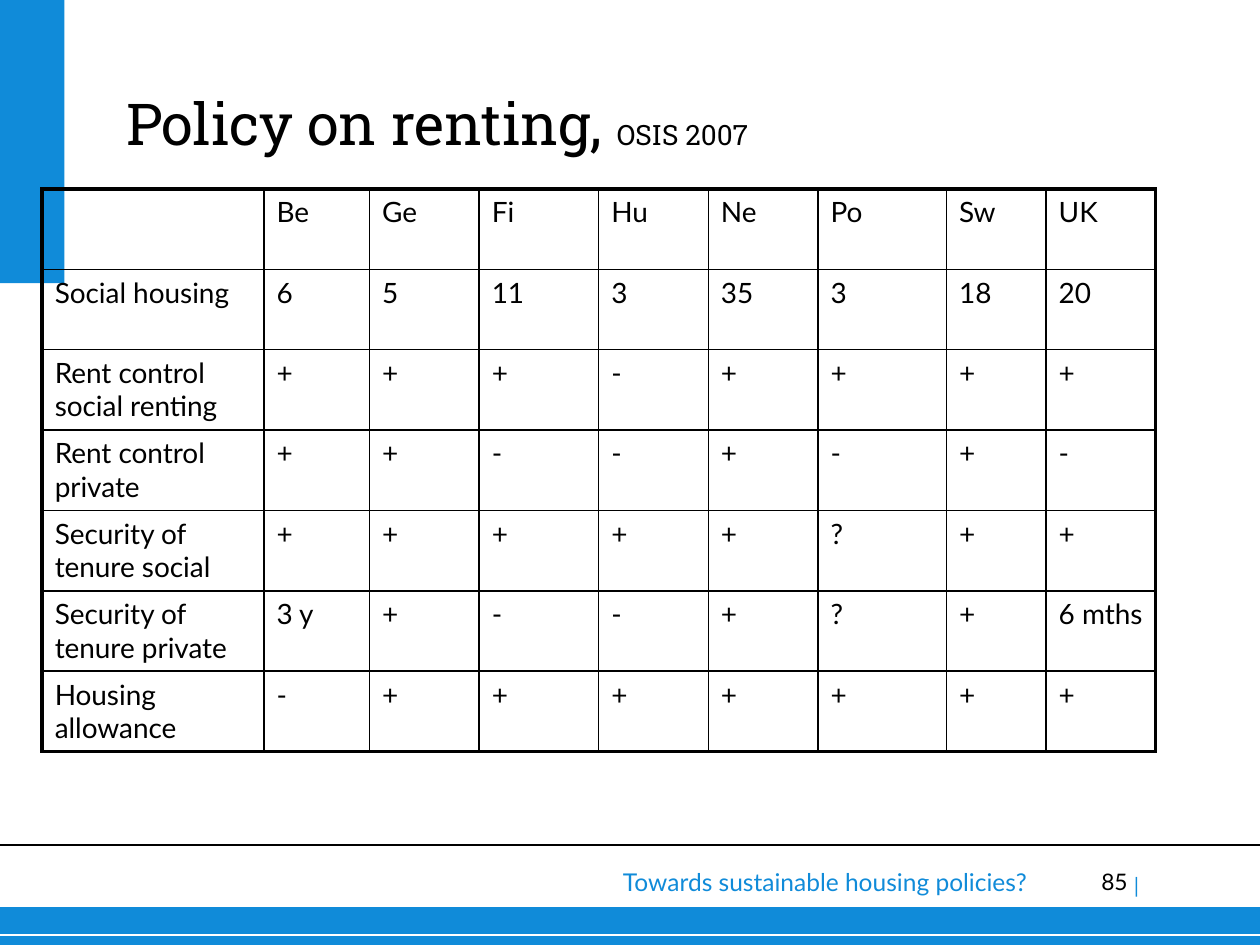
import pptx
import pptx.dml.color
import pptx.enum.shapes
import pptx.enum.text
import pptx.oxml.ns
import pptx.util
from dataclasses import dataclass
from lxml import etree

Cm = pptx.util.Cm
Pt = pptx.util.Pt
Align = pptx.enum.text.PP_ALIGN

BLUE, BLACK, WHITE = "108BD9", "000000", "FFFFFF"
BODY_FONT, TITLE_FONT = "Lato", "Roboto Slab"
SLIDE_WIDTH, SLIDE_HEIGHT = 25.4, 19.05
THIN, THICK = 1, 2.25

COLUMN_WIDTHS = [4.47, 2.13, 2.21, 2.41, 2.21, 2.21, 2.59, 2.01, 2.21]
ROW_HEIGHT = 1.62
POLICY_ROWS = [
    ["", "Be", "Ge", "Fi", "Hu", "Ne", "Po", "Sw", "UK"],
    ["Social housing", "6", "5", "11", "3", "35", "3", "18", "20"],
    ["Rent control social renting", "+", "+", "+", "-", "+", "+", "+", "+"],
    ["Rent control private", "+", "+", "-", "-", "+", "-", "+", "-"],
    ["Security of tenure social", "+", "+", "+", "+", "+", "?", "+", "+"],
    ["Security of tenure private", "3 y", "+", "-", "-", "+", "?", "+", "6 mths"],
    ["Housing allowance", "-", "+", "+", "+", "+", "+", "+", "+"],
]


@dataclass
class Band:
    left: float
    top: float
    width: float
    height: float


@dataclass
class Rule:
    top: float
    color: str
    weight: float


@dataclass
class FooterText:
    text: str
    left: float
    top: float
    width: float
    height: float
    size: float
    color: str
    align: Align
    inset_x: float = 0
    inset_y: float = 0


BANDS = [Band(0, 18.29, SLIDE_WIDTH, 0.76), Band(0, 0, 1.3, 5.71)]
RULES = [Rule(18.85, WHITE, 0.75), Rule(17.04, BLACK, 1)]
FOOTER_TEXTS = [
    FooterText("85", 21.23, 17.5, 1.5, 0.71, 13, BLACK, Align.RIGHT),
    FooterText("Towards sustainable housing policies?", 8.69, 17.35, 12.27, 0.86,
               14, BLUE, Align.RIGHT, 0.25, 0.13),
    FooterText("|", 22.86, 17.58, 2.54, 0.51, 12, BLUE, Align.LEFT),
]


def rgb(color: str) -> pptx.dml.color.RGBColor:
    return pptx.dml.color.RGBColor.from_string(color)


def apply_format(target, values: dict) -> None:
    for name, value in values.items():
        setattr(target, name, value)


def add_run(paragraph, text: str, size: float, color: str = BLACK, font: str = BODY_FONT) -> None:
    run = paragraph.add_run()
    run.text = text
    apply_format(run.font, {"name": font, "size": Pt(size), "bold": False})
    run.font.color.rgb = rgb(color)


def draw_band(slide, band: Band) -> None:
    bar = slide.shapes.add_shape(
        pptx.enum.shapes.MSO_SHAPE.RECTANGLE,
        Cm(band.left), Cm(band.top), Cm(band.width), Cm(band.height))
    bar.shadow.inherit = False
    bar.fill.solid()
    bar.fill.fore_color.rgb = rgb(BLUE)
    bar.line.fill.background()


def draw_rule(slide, rule: Rule) -> None:
    line = slide.shapes.add_connector(
        pptx.enum.shapes.MSO_CONNECTOR.STRAIGHT,
        0, Cm(rule.top), Cm(SLIDE_WIDTH), Cm(rule.top))
    line.line.color.rgb = rgb(rule.color)
    line.line.width = Pt(rule.weight)
    properties = line._element.spPr
    etree.SubElement(properties, pptx.oxml.ns.qn("a:effectLst"))


def draw_footer_text(slide, item: FooterText) -> None:
    box = slide.shapes.add_textbox(Cm(item.left), Cm(item.top), Cm(item.width), Cm(item.height))
    apply_format(box.text_frame, {
        "word_wrap": True,
        "margin_left": Cm(item.inset_x), "margin_right": Cm(item.inset_x),
        "margin_top": Cm(item.inset_y), "margin_bottom": Cm(item.inset_y),
    })
    paragraph = box.text_frame.paragraphs[0]
    paragraph.alignment = item.align
    add_run(paragraph, item.text, item.size, item.color)


def draw_title(slide) -> None:
    title = slide.shapes.title
    apply_format(title, {"left": Cm(2.54), "top": Cm(0.2), "width": Cm(21.29), "height": Cm(2.97)})
    apply_format(title.text_frame, {
        "word_wrap": True,
        "auto_size": pptx.enum.text.MSO_AUTO_SIZE.NONE,
        "vertical_anchor": pptx.enum.text.MSO_ANCHOR.BOTTOM,
        "margin_left": 0, "margin_right": 0, "margin_top": 0, "margin_bottom": 0,
    })
    heading = title.text_frame.paragraphs[0]
    heading.alignment = Align.LEFT
    add_run(heading, "Policy on renting, ", 33, font=TITLE_FONT)
    add_run(heading, "OSIS 2007", 16, font=TITLE_FONT)


def set_borders(cell, weights: dict[str, float]) -> None:
    properties = cell._tc.get_or_add_tcPr()
    for side, weight in weights.items():
        border = etree.SubElement(properties, pptx.oxml.ns.qn(f"a:ln{side}"), w=str(int(Pt(weight))))
        fill = etree.SubElement(border, pptx.oxml.ns.qn("a:solidFill"))
        etree.SubElement(fill, pptx.oxml.ns.qn("a:srgbClr"), val=BLACK)


def draw_policy_table(slide) -> None:
    row_count, column_count = len(POLICY_ROWS), len(COLUMN_WIDTHS)
    table = slide.shapes.add_table(
        row_count, column_count, Cm(0.85), Cm(3.81),
        Cm(sum(COLUMN_WIDTHS)), Cm(ROW_HEIGHT * row_count)).table
    apply_format(table, {"first_row": False, "horz_banding": False})
    for column, width in zip(table.columns, COLUMN_WIDTHS):
        column.width = Cm(width)
    for r, entries in enumerate(POLICY_ROWS):
        table.rows[r].height = Cm(ROW_HEIGHT)
        for c, entry in enumerate(entries):
            cell = table.cell(r, c)
            # Outer edges are thick, inner ones thin
            set_borders(cell, {
                "L": THICK if c == 0 else THIN,
                "R": THICK if c == column_count - 1 else THIN,
                "T": THICK if r == 0 else THIN,
                "B": THICK if r == row_count - 1 else THIN,
            })
            cell.fill.background()
            if entry:
                add_run(cell.text_frame.paragraphs[0], entry, 16)


def main() -> None:
    deck = pptx.Presentation()
    apply_format(deck, {"slide_width": Cm(SLIDE_WIDTH), "slide_height": Cm(SLIDE_HEIGHT)})
    slide = deck.slides.add_slide(deck.slide_layouts.get_by_name("Title Only"))

    # Frame and footer
    for band in BANDS:
        draw_band(slide, band)
    for rule in RULES:
        draw_rule(slide, rule)
    for item in FOOTER_TEXTS:
        draw_footer_text(slide, item)

    # Content
    draw_title(slide)
    draw_policy_table(slide)
    deck.save("out.pptx")


if __name__ == "__main__":
    main()
